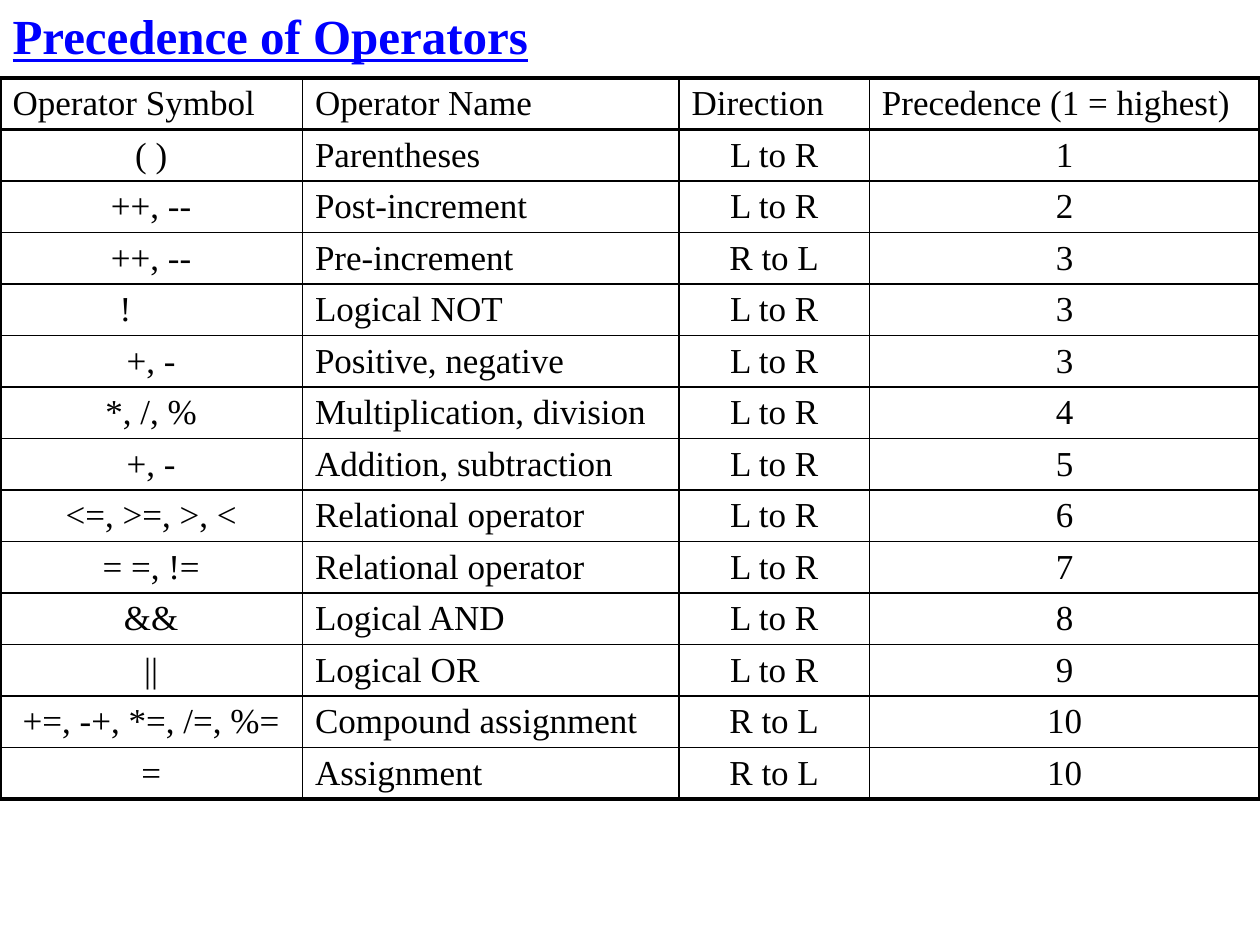
from typing import NamedTuple

from lxml import etree
from pptx import Presentation
from pptx.dml.color import RGBColor
from pptx.enum import text
from pptx.oxml import ns
from pptx.util import Pt

COLORS = {"title": "0000FF", "ink": "000000"}
FONT = "Times New Roman"
LEFT, MID = text.PP_ALIGN.LEFT, text.PP_ALIGN.CENTER
THIN, THICK = 1, 2.25
ROW_H = 29.4


class Column(NamedTuple):
    head: str
    width: float
    align: text.PP_ALIGN


class Operator(NamedTuple):
    symbol: str
    name: str
    rank: int
    order: str = "L to R"


COLUMNS = [
    Column("Operator Symbol", 172.8, MID),
    Column("Operator Name", 215.28, LEFT),
    Column("Direction", 108.72, MID),
    Column("Precedence (1 = highest)", 223.2, MID),
]
OPERATORS = [
    Operator("( )", "Parentheses", 1),
    Operator("++, --", "Post-increment", 2),
    Operator("++, --", "Pre-increment", 3, "R to L"),
    Operator("!\t", "Logical NOT", 3),
    Operator("+, -", "Positive, negative", 3),
    Operator("*, /, %", "Multiplication, division", 4),
    Operator("+, -", "Addition, subtraction", 5),
    Operator("<=, >=, >, <", "Relational operator", 6),
    Operator("= =, !=", "Relational operator", 7),
    Operator("&&", "Logical AND", 8),
    Operator("||", "Logical OR", 9),
    Operator("+=, -+, *=, /=, %=", "Compound assignment", 10, "R to L"),
    Operator("=", "Assignment", 10, "R to L"),
]


def write(frame, words: str, *, size: float = 20, color: str = "ink",
          align=LEFT, bold: bool = False, line: bool = False) -> None:
    par = frame.paragraphs[0]
    par.alignment = align
    run = par.add_run()
    run.text = words
    font = run.font
    font.name, font.size = FONT, Pt(size)
    font.bold, font.underline = bold, line
    font.color.rgb = RGBColor.from_string(COLORS[color])


def border(cell, widths: dict[str, float]) -> None:
    """Put the lines, keyed L, R, T, B in schema order, ahead of the fill."""
    props = cell._tc.get_or_add_tcPr()
    for place, (side, width) in enumerate(widths.items()):
        edge = etree.Element(ns.qn(f"a:ln{side}"), w=str(Pt(width)))
        fill = etree.SubElement(edge, ns.qn("a:solidFill"))
        etree.SubElement(fill, ns.qn("a:srgbClr"), val=COLORS["ink"])
        props.insert(place, edge)


def add_title(slide) -> None:
    title = slide.shapes.title
    title.left, title.top = Pt(0), Pt(0)
    title.width, title.height = Pt(540), Pt(40.32)
    frame = title.text_frame
    frame.auto_size = text.MSO_AUTO_SIZE.NONE
    frame.vertical_anchor = text.MSO_ANCHOR.MIDDLE
    write(frame, "Precedence of Operators", size=28, color="title",
          bold=True, line=True)


def add_grid(slide) -> None:
    rows = [[col.head for col in COLUMNS]]
    rows += [[op.symbol, op.name, op.order, str(op.rank)] for op in OPERATORS]
    total = sum(col.width for col in COLUMNS)
    table = slide.shapes.add_table(
        len(rows), len(COLUMNS), Pt(0), Pt(44.64),
        Pt(total), Pt(ROW_H * len(rows))).table
    table.first_row = table.horz_banding = False
    for col, spec in zip(table.columns, COLUMNS):
        col.width = Pt(spec.width)
    last_row, last_col = len(rows) - 1, len(COLUMNS) - 1
    for r, row in enumerate(rows):
        table.rows[r].height = Pt(ROW_H)
        for c, words in enumerate(row):
            cell = table.cell(r, c)
            cell.fill.background()
            write(cell.text_frame, words,
                  align=COLUMNS[c].align if r else LEFT)
            border(cell, {
                "L": THICK if c == 0 else THIN,
                "R": THICK if c == last_col else THIN,
                "T": THICK if r < 2 else THIN,
                "B": THICK if r in (0, last_row) else THIN,
            })


def main() -> None:
    deck = Presentation()
    deck.slide_width, deck.slide_height = Pt(720), Pt(540)
    slide = deck.slides.add_slide(deck.slide_layouts[5])
    add_title(slide)
    add_grid(slide)
    deck.save("out.pptx")


if __name__ == "__main__":
    main()
